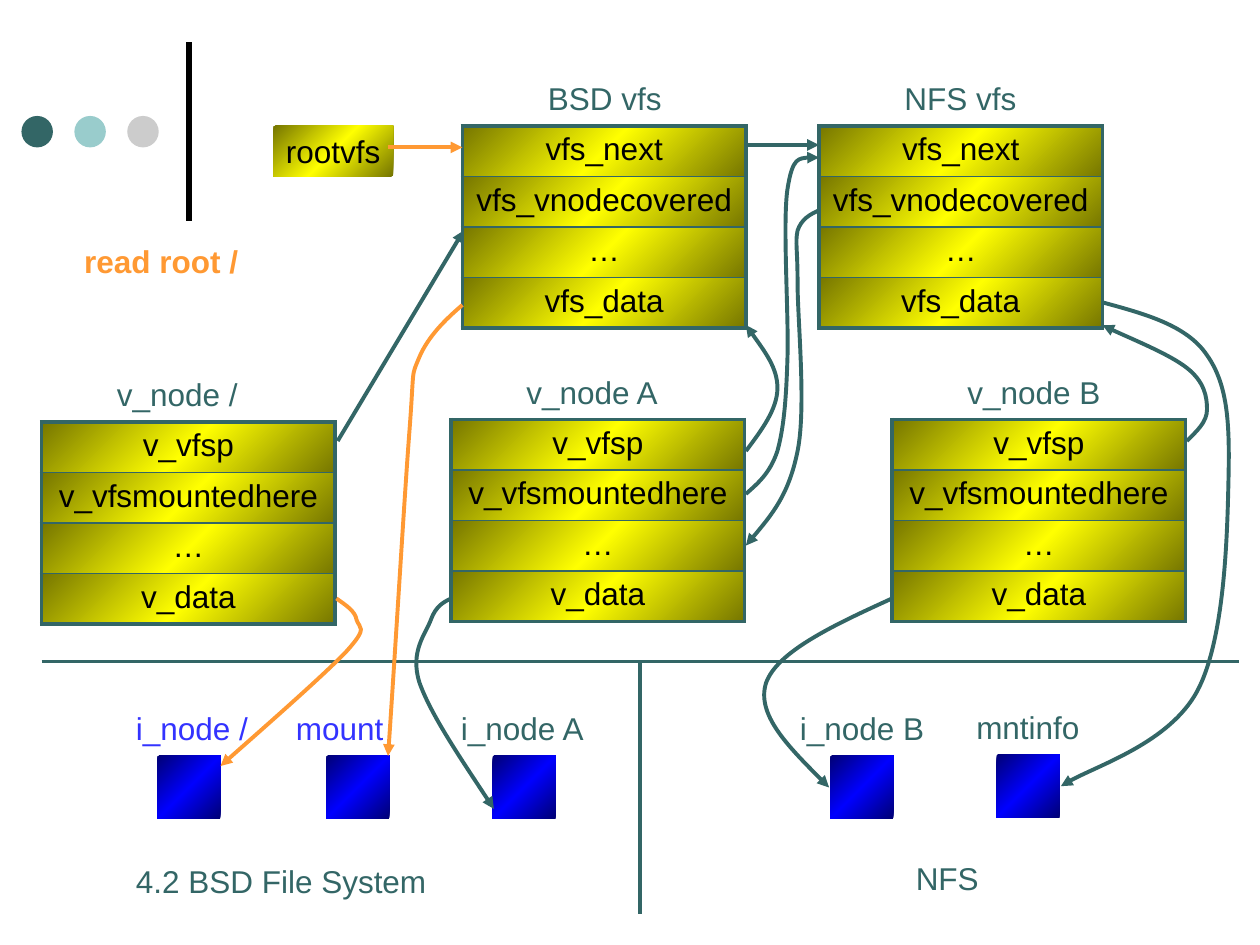
from copy import deepcopy
from dataclasses import dataclass

from lxml import etree
from pptx import Presentation
from pptx.dml.color import RGBColor
from pptx.enum.shapes import MSO_CONNECTOR, MSO_SHAPE
from pptx.enum.text import MSO_ANCHOR, MSO_AUTO_SIZE, PP_ALIGN
from pptx.oxml.ns import qn
from pptx.util import Pt

PX = 9144  # EMU per px, 100 px to the inch
RECT, OVAL = MSO_SHAPE.RECTANGLE, MSO_SHAPE.OVAL
STRAIGHT = MSO_CONNECTOR.STRAIGHT
CENTER, MIDDLE = PP_ALIGN.CENTER, MSO_ANCHOR.MIDDLE
FIT = MSO_AUTO_SIZE.SHAPE_TO_FIT_TEXT


@dataclass(frozen=True)
class Theme:
    font: str = "Arial"
    size: int = 18
    thin: float = 1
    line: float = 2.25
    bar: float = 3
    black: str = "000000"
    teal: str = "336666"
    aqua: str = "99CCCC"
    gray: str = "CCCCCC"
    orange: str = "FF9933"
    link: str = "3333FF"
    gold: tuple = ("767600", "FFFF00")
    blue: tuple = ("000076", "0000FF")


T = Theme()
ROW = 40
VFS = ("vfs_next", "vfs_vnodecovered", "…", "vfs_data")
VNODE = ("v_vfsp", "v_vfsmountedhere", "…", "v_data")


def rgb(code):
    return RGBColor.from_string(code)


def emu(*vals):
    return [v * PX for v in vals]


def write(frame, text, color, bold=False):
    para = frame.paragraphs[0]
    run = para.add_run()
    run.text = text
    font = run.font
    font.name, font.size, font.bold = T.font, Pt(T.size), bold
    font.color.rgb = rgb(color)
    return para


def shade(fill, node, pair):
    """Fill with a diagonal gradient: edge, core, edge."""
    fill.gradient()
    fill.gradient_angle = 315
    for stop, code, pos in zip(fill.gradient_stops, pair, (0, 0.5)):
        stop.color.rgb = rgb(code)
        stop.position = pos
    stops = next(node.iter(qn("a:gsLst")))
    last = deepcopy(stops[0])
    last.set("pos", "100000")
    stops.append(last)


def block(slide, kind, box):
    shape = slide.shapes.add_shape(kind, *emu(*box))
    shape.shadow.inherit = False
    shape.line.fill.background()
    return shape


def label(slide, box, text, color=T.teal, bold=False):
    frame = slide.shapes.add_textbox(*emu(*box)).text_frame
    frame.word_wrap = False
    frame.auto_size = FIT
    write(frame, text, color, bold)


def stroke(shape, color, width, arrow):
    shape.line.color.rgb = rgb(color)
    shape.line.width = Pt(width)
    if arrow:
        line = next(shape._element.iter(qn("a:ln")))
        etree.SubElement(line, qn("a:tailEnd"), type="triangle")


def rule(slide, ends, color=T.teal, width=T.line, arrow=False):
    link = slide.shapes.add_connector(STRAIGHT, *emu(*ends))
    stroke(link, color, width, arrow)
    etree.SubElement(link._element.spPr, qn("a:effectLst"))


def curve(slide, points, color=T.teal):
    """Draw an arrow of cubic curves: a start, then three points for each."""
    build = slide.shapes.build_freeform(*points[0], scale=PX)
    build.add_line_segments(points[1:], close=False)
    shape = build.convert_to_shape()
    shape.shadow.inherit = False
    shape.fill.background()
    path = next(shape._element.iter(qn("a:path")))
    steps = path.findall(qn("a:lnTo"))
    for i in range(0, len(steps), 3):
        bend = etree.SubElement(path, qn("a:cubicBezTo"))
        for step in steps[i:i + 3]:
            bend.append(step[0])
            path.remove(step)
    stroke(shape, color, T.line, True)


def edge(cell, side, width):
    line = etree.SubElement(cell._tc.get_or_add_tcPr(), qn("a:ln" + side),
                            w=str(Pt(width)))
    fill = etree.SubElement(line, qn("a:solidFill"))
    etree.SubElement(fill, qn("a:srgbClr"), val=T.teal)


def stack(slide, box, title, shift, span, names):
    """Draw a titled record, one row for each field name."""
    x, y, w = box
    label(slide, (x + shift, y - 42, span, ROW), title)
    table = slide.shapes.add_table(
        len(names), 1, *emu(x, y, w, ROW * len(names))).table
    table.first_row = table.horz_banding = False
    table.columns[0].width = w * PX
    for i, name in enumerate(names):
        table.rows[i].height = ROW * PX
        cell = table.cell(i, 0)
        top = T.line if i == 0 else T.thin
        low = T.line if i == len(names) - 1 else T.thin
        for side, width in zip("LRTB", (T.line, T.line, top, low)):
            edge(cell, side, width)
        shade(cell.fill, cell._tc, T.gold)
        write(cell.text_frame, name, T.black).alignment = CENTER


def node(slide, box, title, shift, span, color=T.teal):
    """Draw a blue square with its title above."""
    x, y, side = box
    label(slide, (x - shift, y - 42, span, ROW), title, color)
    square = block(slide, RECT, (x, y, side, side))
    shade(square.fill, square._element, T.blue)


def mark(slide, box):
    """Draw the corner ornament: three dots and a bar."""
    x, y, w, h = box
    for i, color in enumerate((T.teal, T.aqua, T.gray)):
        dot = block(slide, OVAL, (x + 42 * i, y + 59, 25, 25))
        dot.fill.solid()
        dot.fill.fore_color.rgb = rgb(color)
    rule(slide, (x + w, y + h, x + w, y), T.black, T.bar)


def root(slide, box):
    shape = block(slide, RECT, box)
    shade(shape.fill, shape._element, T.gold)
    frame = shape.text_frame
    frame.word_wrap = False
    frame.vertical_anchor = MIDDLE
    write(frame, "rootvfs", T.black).alignment = PP_ALIGN.LEFT


def floor(slide, box):
    """Split the lower part into the two file systems."""
    x, y, w, h = box
    rule(slide, (x, y, x + w, y))
    rule(slide, (x + 475, y, x + 475, y + h))
    label(slide, (x + 65, y + 154, 251, ROW), "4.2 BSD File System")
    label(slide, (x + 684, y + 152, 70, ROW), "NFS")


def links(slide):
    rule(slide, (308, 117, 367, 117), T.orange, arrow=True)
    rule(slide, (268, 350, 368, 183), arrow=True)
    rule(slide, (592, 115, 650, 115), arrow=True)
    for points in (
        [(367, 242), (353, 254), (340, 267), (333, 283), (326, 300),
         (329, 289), (325, 342), (321, 394), (315, 497), (308, 600)],
        [(267, 475), (274, 480), (282, 485), (283, 492), (285, 499),
         (293, 497), (275, 517), (257, 536), (193, 592), (175, 608)],
    ):
        curve(slide, points, T.orange)
    for points in (
        [(592, 358), (604, 342), (617, 325), (617, 308), (617, 292),
         (604, 275), (592, 258)],
        [(358, 475), (352, 478), (346, 481), (342, 492), (338, 503),
         (325, 517), (333, 542), (342, 567), (367, 604), (392, 642)],
        [(875, 240), (908, 249), (942, 258), (958, 282), (975, 306),
         (976, 338), (975, 382), (974, 426), (972, 508), (950, 549),
         (928, 589), (861, 611), (842, 624)],
        [(592, 392), (601, 384), (611, 376), (617, 358), (622, 340),
         (624, 318), (625, 283), (626, 249), (621, 176), (625, 150),
         (629, 124), (640, 124), (650, 125)],
        [(650, 167), (643, 170), (636, 174), (633, 183), (631, 193),
         (633, 196), (633, 225), (633, 254), (640, 324), (633, 358),
         (626, 393), (609, 413), (592, 433)],
        [(708, 475), (662, 496), (617, 517), (608, 542), (600, 567),
         (629, 596), (658, 625)],
        [(942, 350), (950, 342), (958, 335), (958, 325), (958, 315),
         (956, 303), (942, 292), (928, 281), (886, 264), (875, 258)],
    ):
        curve(slide, points)


def main():
    deck = Presentation()
    deck.slide_width, deck.slide_height = emu(1000, 750)
    slide = deck.slides.add_slide(deck.slide_layouts[6])
    mark(slide, (17, 33, 133, 142))
    root(slide, (217, 100, 95, 40))
    floor(slide, (33, 525, 950, 200))
    stack(slide, (367, 100, 225), "BSD vfs", 58, 111, VFS)
    stack(slide, (650, 100, 225), "NFS vfs", 58, 109, VFS)
    stack(slide, (33, 335, 233), "v_node /", 50, 116, VNODE)
    stack(slide, (358, 333, 233), "v_node A", 50, 126, VNODE)
    stack(slide, (708, 333, 233), "v_node B", 50, 126, VNODE)
    node(slide, (125, 600, 50), "i_node /", 27, 109, T.link)
    node(slide, (259, 600, 50), "mount", 34, 90, T.link)
    node(slide, (391, 600, 50), "i_node A", 35, 119)
    node(slide, (659, 600, 50), "i_node B", 34, 119)
    node(slide, (791, 599, 50), "mntinfo", 26, 102)
    links(slide)
    label(slide, (57, 187, 144, ROW), "read root /", T.orange, True)
    deck.save("out.pptx")


if __name__ == "__main__":
    main()
